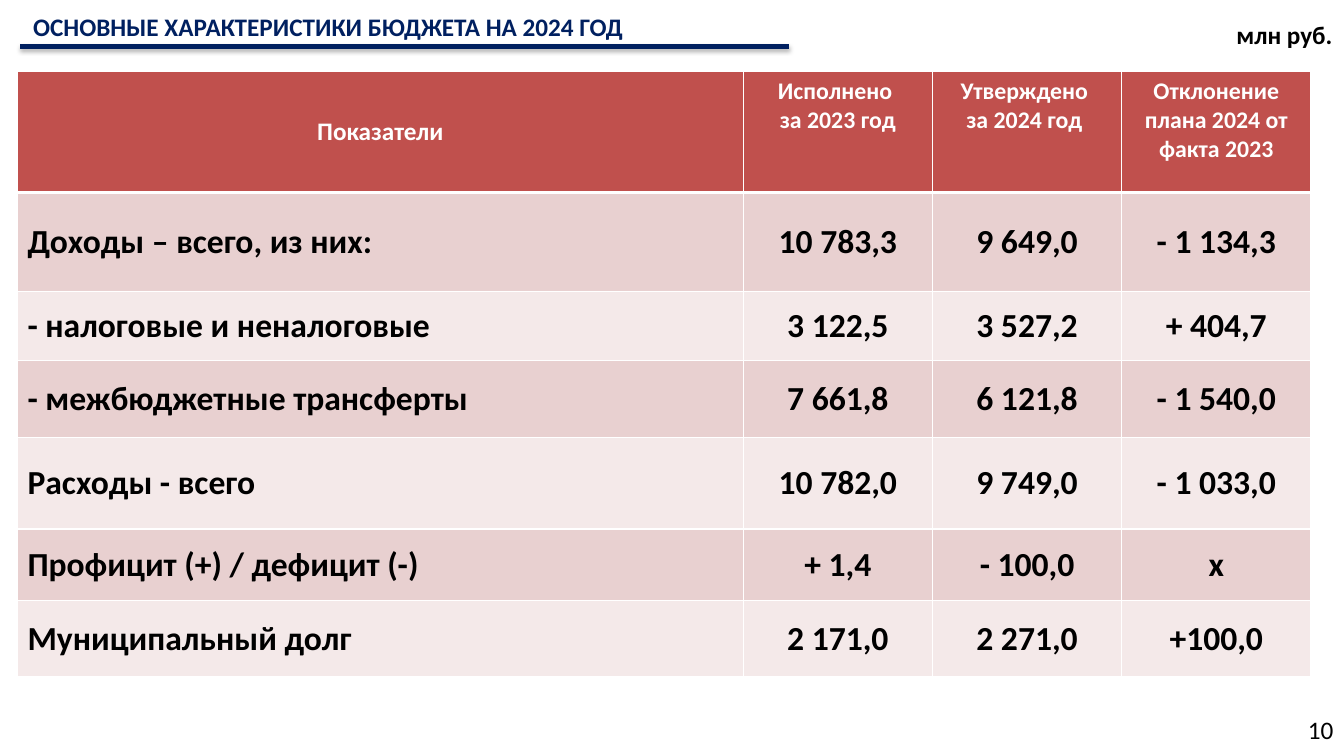
"""Build the slide with the main figures of the 2024 budget."""
import pptx
import pptx.dml.color
import pptx.enum.shapes
import pptx.enum.text
import pptx.oxml
import pptx.util
from pptx.util import Cm

TITLE = "ОСНОВНЫЕ ХАРАКТЕРИСТИКИ БЮДЖЕТА НА 2024 ГОД"
HEADER = ("Показатели", "Исполнено \nза 2023 год", "Утверждено \nза 2024 год ",
          "Отклонение плана 2024 от факта 2023")
ROWS = [
    ("Доходы – всего, из них:", "10 783,3", "9 649,0", "- 1 134,3"),
    ("- налоговые и неналоговые", "3 122,5", "3 527,2", "+ 404,7"),
    ("- межбюджетные трансферты", "7 661,8", "6 121,8", "- 1 540,0"),
    ("Расходы - всего", "10 782,0", "9 749,0", "- 1 033,0"),
    ("Профицит (+) / дефицит (-)", "+ 1,4", "- 100,0", "х"),
    ("Муниципальный долг", "2 171,0", "2 271,0", "+100,0"),
]
LABELS = [
    ("млн руб.", (30.91, 0.36, 2.97, 1.02), True),
    ("10", (32.71, 17.88, 1.17, 1.02), False),
]
COLUMN_WIDTHS = (18.29, 4.77, 4.77, 4.77)
ROW_HEIGHTS = (3.05, 2.49, 1.75, 1.93, 2.31, 1.8, 1.93)
NAVY, RED, WHITE, BLACK = "002060", "C0504D", "FFFFFF", "000000"
BANDS = ("E8D0D0", "F4E9E9")
NAMESPACE = 'xmlns:a="http://schemas.openxmlformats.org/drawingml/2006/main"'
ALIGN = pptx.enum.text.PP_ALIGN
ANCHOR = pptx.enum.text.MSO_ANCHOR


def color(value):
    return pptx.dml.color.RGBColor.from_string(value)


def apply(target, formats):
    for name, value in formats.items():
        setattr(target, name, value)


def write(frame, text, size, text_color, bold=True, align=ALIGN.LEFT):
    frame.text = text
    for paragraph in frame.paragraphs:
        paragraph.alignment = align
        for run in paragraph.runs:
            apply(run.font, {"name": "Calibri", "size": pptx.util.Pt(size), "bold": bold})
            run.font.color.rgb = color(text_color)


def place(shape, box):
    apply(shape, dict(zip(("left", "top", "width", "height"), map(Cm, box))))


def set_borders(cell, top, bottom):
    widths = {"lnL": 1, "lnR": 1, "lnT": top, "lnB": bottom}
    for index, (side, width) in enumerate(widths.items()):
        cell._tc.get_or_add_tcPr().insert(index, pptx.oxml.parse_xml(
            f'<a:{side} {NAMESPACE} w="{width * 12700}"><a:solidFill>'
            f'<a:srgbClr val="{WHITE}"/></a:solidFill></a:{side}>'))


def add_title(slide):
    title = slide.shapes.title
    place(title, (0.58, 0.15, 30.1, 1.02))
    write(title.text_frame, TITLE, 18, NAVY)
    apply(title.text_frame, {"word_wrap": True, "vertical_anchor": ANCHOR.TOP,
                             "auto_size": pptx.enum.text.MSO_AUTO_SIZE.NONE})


def add_budget_table(slide):
    table = slide.shapes.add_table(
        len(ROW_HEIGHTS), len(COLUMN_WIDTHS), Cm(0.44), Cm(1.8),
        Cm(sum(COLUMN_WIDTHS)), Cm(sum(ROW_HEIGHTS))).table
    for column, width in zip(table.columns, COLUMN_WIDTHS):
        column.width = Cm(width)
    for row, height in zip(table.rows, ROW_HEIGHTS):
        row.height = Cm(height)
    for row_index, texts in enumerate([HEADER] + ROWS):
        is_header = row_index == 0
        fill = RED if is_header else BANDS[(row_index - 1) % 2]
        for column_index, text in enumerate(texts):
            is_first = column_index == 0
            cell = table.cell(row_index, column_index)
            cell.fill.solid()
            cell.fill.fore_color.rgb = color(fill)
            size = (18 if is_first else 17) if is_header else 24
            write(cell.text_frame, text, size, WHITE if is_header else BLACK,
                  align=ALIGN.LEFT if is_first and not is_header else ALIGN.CENTER)
            cell.vertical_anchor = ANCHOR.TOP if is_header and not is_first else ANCHOR.MIDDLE
            set_borders(cell, 3 if row_index == 1 else 1, 3 if is_header else 1)


def add_title_rule(slide):
    rule = slide.shapes.add_connector(
        pptx.enum.shapes.MSO_CONNECTOR.STRAIGHT, Cm(0.51), Cm(1.17), Cm(19.89), Cm(1.17))
    rule.line.width = pptx.util.Pt(3)
    rule.line.color.rgb = color(NAVY)
    rule._element.spPr.append(pptx.oxml.parse_xml(
        f'<a:effectLst {NAMESPACE}><a:outerShdw blurRad="40000" dist="23000" dir="5400000" '
        f'rotWithShape="0"><a:srgbClr val="{BLACK}"><a:alpha val="35000"/></a:srgbClr>'
        '</a:outerShdw></a:effectLst>'))


def main():
    presentation = pptx.Presentation()
    apply(presentation, {"slide_width": Cm(33.87), "slide_height": Cm(19.05)})
    slide = presentation.slides.add_slide(presentation.slide_layouts[5])
    add_title(slide)
    add_budget_table(slide)
    add_title_rule(slide)
    for text, box, bold in LABELS:
        label = slide.shapes.add_textbox(*map(Cm, box))
        write(label.text_frame, text, 18, BLACK, bold)
        label.text_frame.word_wrap = False
    presentation.save("out.pptx")


if __name__ == "__main__":
    main()
